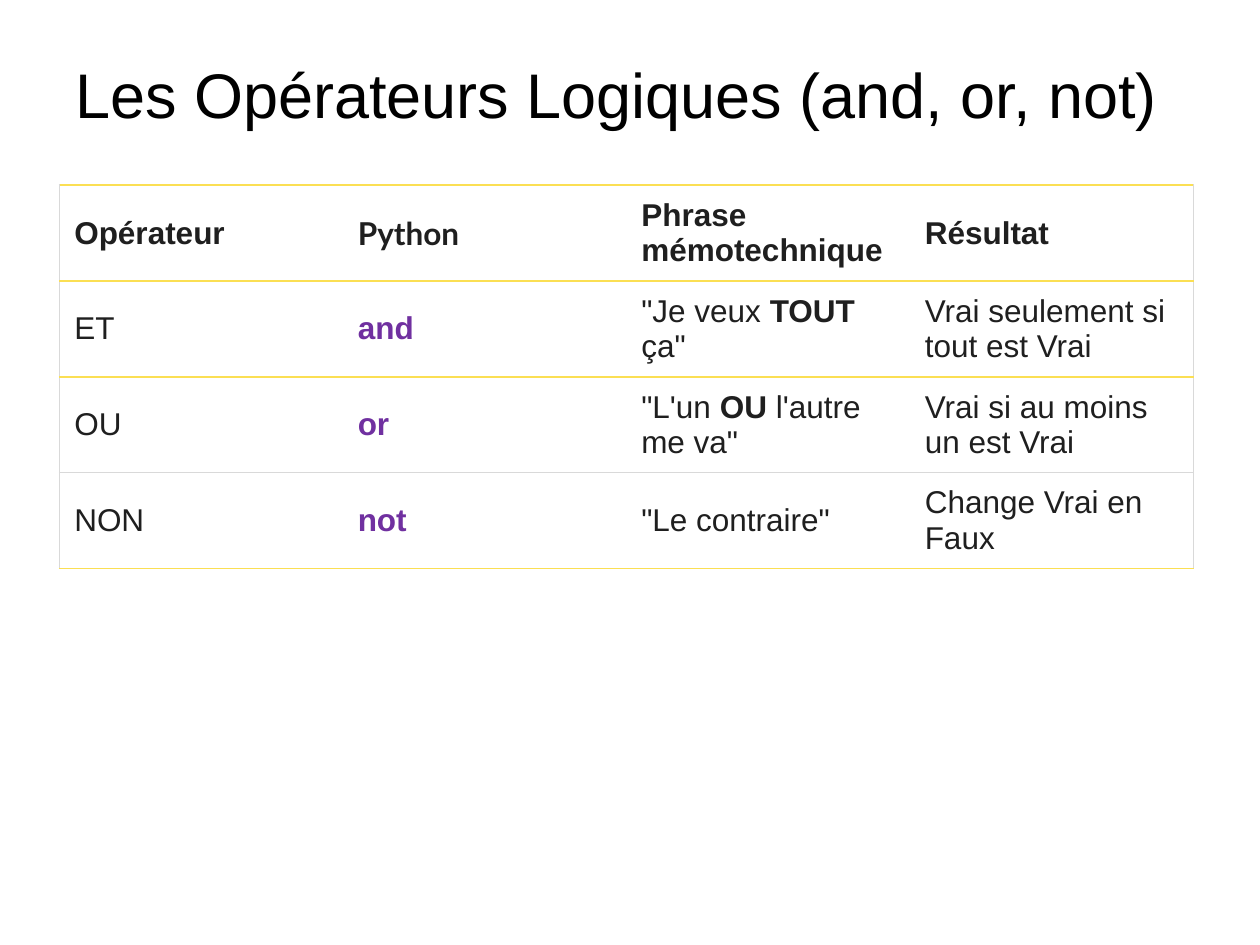
import pptx
import pptx.dml.color
import pptx.enum.text
import pptx.oxml
import pptx.oxml.ns
import pptx.util
from pptx.util import Inches

INK, PURPLE, YELLOW, GREY, WHITE = "1F1F1F", "7030A0", "FBDF53", "D9D9D9", "FFFFFF"
MIDDLE = pptx.enum.text.MSO_ANCHOR.MIDDLE
HEADERS = ["Opérateur", "Python", "Phrase mémotechnique", "Résultat"]
OPERATORS = [
    ["ET", "and", ['"Je veux ', "TOUT", ' ça"'], "Vrai seulement si tout est Vrai"],
    ["OU", "or", ['"L\'un ', "OU", ' l\'autre me va"'], "Vrai si au moins un est Vrai"],
    ["NON", "not", '"Le contraire"', "Change Vrai en Faux"],
]


def color(value):
    return pptx.dml.color.RGBColor.from_string(value)


class SlideBuilder:
    """Draws the title and the operator table on one page in a shared style."""

    def __init__(self, page):
        self.page = page
        self.font = "Arial"

    def style(self, span, size, shade, bold=False, font=None):
        span.font.name = font or self.font
        span.font.size = pptx.util.Pt(size)
        span.font.bold = bold
        span.font.color.rgb = color(shade)

    def title(self, text, left, top, width, height):
        box = self.page.shapes.add_textbox(Inches(left), Inches(top), Inches(width), Inches(height))
        frame = box.text_frame
        frame.text = text
        frame.word_wrap = True
        frame.vertical_anchor = MIDDLE
        self.style(frame.paragraphs[0].runs[0], 36, "000000")

    def border(self, cell, side, shade, width=1):
        namespace = pptx.oxml.ns.nsdecls("a")
        paint = f'<a:solidFill><a:srgbClr val="{shade}"/></a:solidFill>' if shade else "<a:noFill/>"
        line = f'<a:ln{side} {namespace} w="{pptx.util.Pt(width)}">{paint}</a:ln{side}>'
        cell._tc.get_or_add_tcPr().append(pptx.oxml.parse_xml(line))

    def cell(self, cell, content, shade=INK, bold=False, font=None):
        cell.margin_left = cell.margin_right = Inches(0.12)
        cell.margin_top = cell.margin_bottom = Inches(0.08)
        cell.vertical_anchor = MIDDLE
        parts = [content] if isinstance(content, str) else content
        para = cell.text_frame.paragraphs[0]
        for index, part in enumerate(parts):
            span = para.add_run()
            span.text = part
            self.style(span, 18, shade, bold or index == 1, font)

    def table(self, rows, left, top, column_width, row_height):
        count, columns = len(rows), len(rows[0])
        frame = self.page.shapes.add_table(
            count, columns, Inches(left), Inches(top),
            Inches(column_width * columns), Inches(row_height * count))
        table = frame.table
        table.first_row = table.horz_banding = False
        rules = [YELLOW] * (count - 1) + [GREY, YELLOW]
        for row, contents in enumerate(rows):
            for column, content in enumerate(contents):
                cell = table.cell(row, column)
                keyword = row > 0 and column == 1
                self.cell(cell, content, PURPLE if keyword else INK, row == 0 or keyword,
                          "Lato" if content == "Python" else None)
                self.border(cell, "L", GREY if column == 0 else None, 0.5)
                self.border(cell, "R", GREY if column == columns - 1 else None, 0.5)
                self.border(cell, "T", rules[row])
                self.border(cell, "B", rules[row + 1])
                cell.fill.solid()
                cell.fill.fore_color.rgb = color(WHITE)


def main():
    deck = pptx.Presentation()
    deck.slide_width, deck.slide_height = Inches(10), Inches(7.5)
    builder = SlideBuilder(deck.slides.add_slide(deck.slide_layouts[6]))
    builder.title("Les Opérateurs Logiques (and, or, not)", 0.5, 0.3, 9, 0.88)
    builder.table([HEADERS] + OPERATORS, 0.47, 1.47, 2.25, 0.72)
    deck.save("out.pptx")


if __name__ == "__main__":
    main()
